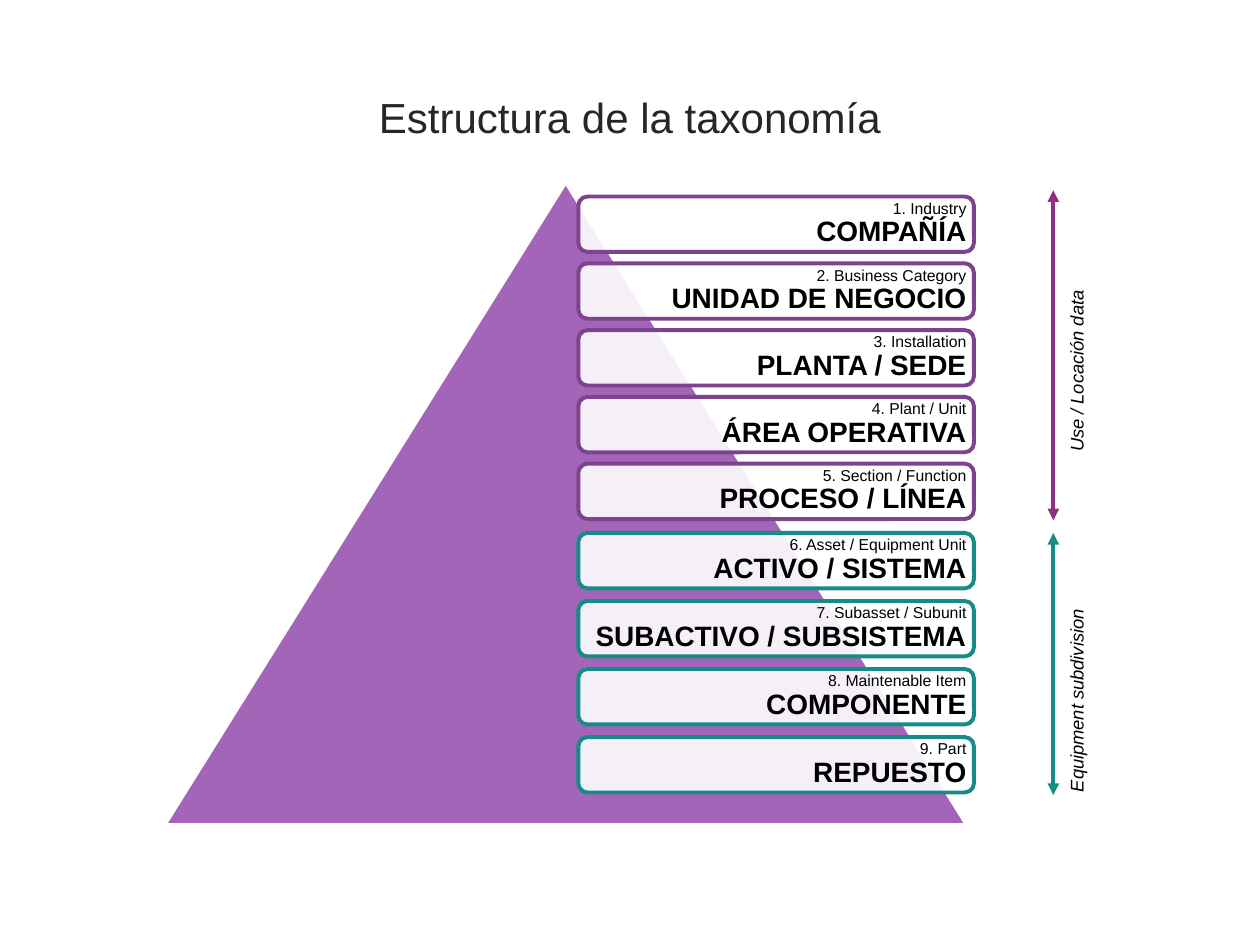
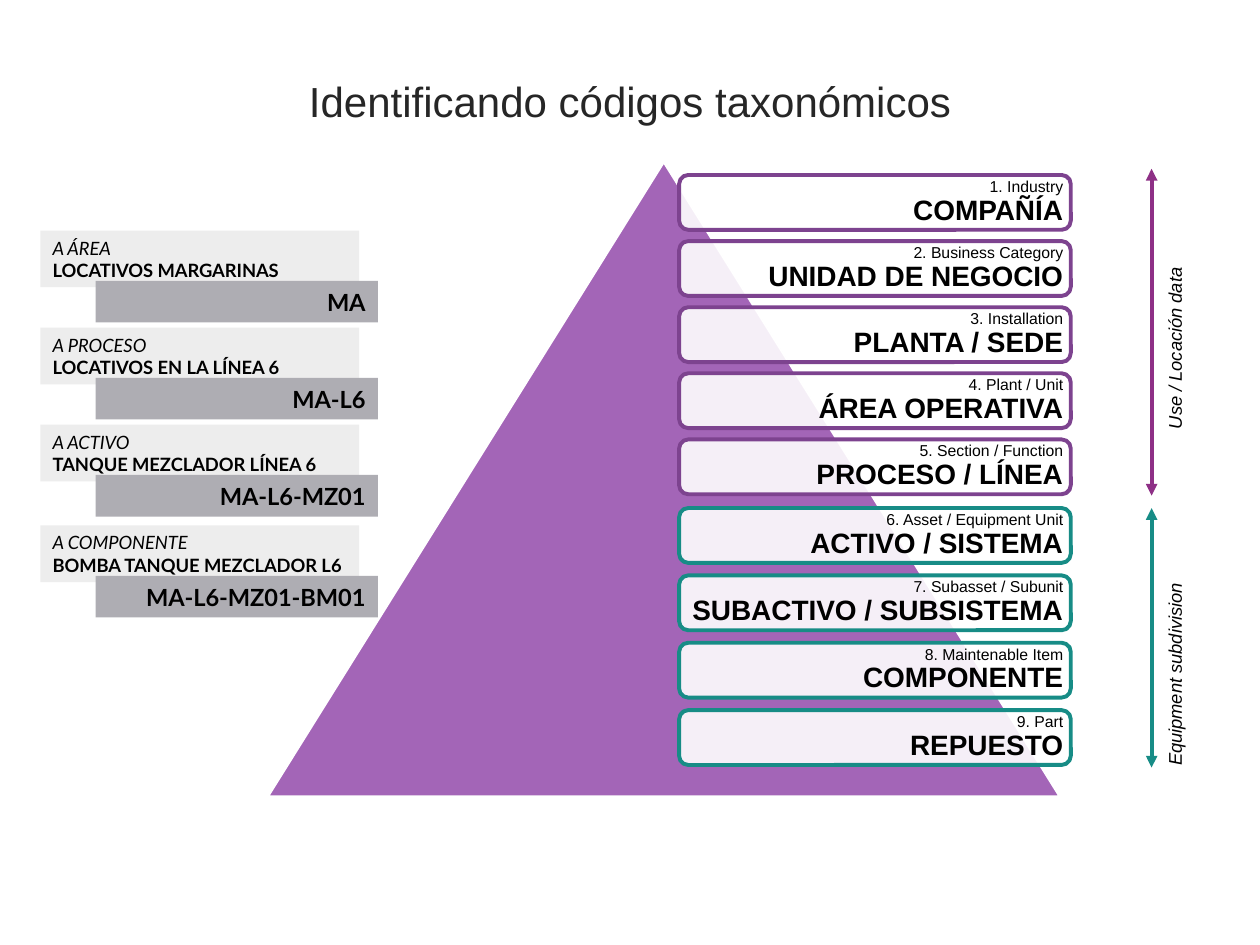
from copy import deepcopy

from lxml import etree
from pptx import Presentation
from pptx.dml.color import RGBColor
from pptx.enum.shapes import MSO_CONNECTOR, MSO_SHAPE
from pptx.enum.text import MSO_ANCHOR, PP_ALIGN
from pptx.oxml.ns import qn
from pptx.util import Inches, Pt

TRIANGLE, ROUNDED, RECTANGLE = (
    MSO_SHAPE.ISOSCELES_TRIANGLE, MSO_SHAPE.ROUNDED_RECTANGLE, MSO_SHAPE.RECTANGLE)
STRAIGHT = MSO_CONNECTOR.STRAIGHT
LEFT, CENTER, RIGHT = PP_ALIGN.LEFT, PP_ALIGN.CENTER, PP_ALIGN.RIGHT
TOP, MIDDLE = MSO_ANCHOR.TOP, MSO_ANCHOR.MIDDLE

WHITE, BLACK, TITLE_GREY = "FFFFFF", "000000", "262626"
LILAC, PURPLE, MAGENTA, TEAL = "A365B7", "7D438F", "8E3086", "178C86"
LABEL_GREY, CODE_GREY = "EDEDED", "AEADB3"
BODY_FONT, CODE_FONT = "Arial", "Lato"

# Vertical lengths are measured from the tip of the pyramid.
LEVEL_GROUPS = [
    {"name": "Use / Locación data", "border": PURPLE, "axis": MAGENTA,
     "span": (0.05, 2.67), "name_middle": 1.14, "name_width": 2.17,
     "first": 0.1, "pitch": 0.53,
     "levels": [("1. Industry", "COMPAÑÍA"),
                ("2. Business Category", "UNIDAD DE NEGOCIO"),
                ("3. Installation", "PLANTA / SEDE"),
                ("4. Plant / Unit", "ÁREA OPERATIVA"),
                ("5. Section / Function", "PROCESO / LÍNEA")]},
    {"name": "Equipment subdivision", "border": TEAL, "axis": TEAL,
     "span": (2.77, 4.85), "name_middle": 3.8, "name_width": 2.25,
     "first": 2.77, "pitch": 0.54,
     "levels": [("6. Asset / Equipment Unit", "ACTIVO / SISTEMA"),
                ("7. Subasset / Subunit", "SUBACTIVO / SUBSISTEMA"),
                ("8. Maintenable Item", "COMPONENTE"),
                ("9. Part", "REPUESTO")]},
]

CODES = [
    (1.83, "A ÁREA", "LOCATIVOS MARGARINAS", "MA"),
    (2.6, "A PROCESO", "LOCATIVOS EN LA LÍNEA 6", "MA-L6"),
    (3.37, "A ACTIVO", "TANQUE MEZCLADOR LÍNEA 6", "MA-L6-MZ01"),
    (4.17, "A COMPONENTE", "BOMBA TANQUE MEZCLADOR L6", "MA-L6-MZ01-BM01"),
]


def color(hex_code):
    return RGBColor.from_string(hex_code)


class Deck:
    """Holds the presentation, its style and the current slide."""

    def __init__(self):
        self.presentation = Presentation()
        self.presentation.slide_width = Inches(10)
        self.presentation.slide_height = Inches(7.5)
        self.slide = None

    def new_slide(self, title, title_top):
        self.slide = self.presentation.slides.add_slide(
            self.presentation.slide_layouts[6])
        frame = self.text_box(0, title_top, 10, 0.53).text_frame
        frame.margin_top = Inches(0.09)
        frame.text = title
        self.style(frame.paragraphs[0], 24, align=CENTER, ink=TITLE_GREY)

    def style(self, paragraph, size, font=BODY_FONT, align=LEFT, ink=BLACK,
              bold=False, italic=False):
        paragraph.alignment = align
        for run in paragraph.runs:
            run.font.name = font
            run.font.size = Pt(size)
            run.font.bold = bold
            run.font.italic = italic
            run.font.color.rgb = color(ink)

    def text_box(self, left, top, width, height):
        box = self.slide.shapes.add_textbox(
            Inches(left), Inches(top), Inches(width), Inches(height))
        box.text_frame.word_wrap = True
        return box

    def shape(self, kind, left, top, width, height, fill, border=None,
              border_width=1, opacity=100):
        shape = self.slide.shapes.add_shape(
            kind, Inches(left), Inches(top), Inches(width), Inches(height))
        shape.shadow.inherit = False
        shape.fill.solid()
        shape.fill.fore_color.rgb = color(fill)
        if opacity < 100:
            rgb = shape.fill._xPr.find(qn("a:solidFill"))[0]
            etree.SubElement(rgb, qn("a:alpha"), val=str(opacity * 1000))
        if border:
            shape.line.color.rgb = color(border)
            shape.line.width = Pt(border_width)
        else:
            shape.line.fill.background()
        return shape

    def double_arrow(self, x, top, bottom, ink):
        arrow = self.slide.shapes.add_connector(
            STRAIGHT, Inches(x), Inches(top), Inches(x), Inches(bottom))
        arrow.line.color.rgb = color(ink)
        arrow.line.width = Pt(2.25)
        for end in ("a:headEnd", "a:tailEnd"):
            etree.SubElement(arrow.line._ln, qn(end), type="triangle")
        etree.SubElement(arrow._element.spPr, qn("a:effectLst"))

    def vertical_label(self, text, center_x, center_y, width):
        height = 0.35
        label = self.text_box(center_x - width / 2, center_y - height / 2,
                              width, height)
        label.rotation = 270
        label.text_frame.text = text
        self.style(label.text_frame.paragraphs[0], 10.5, italic=True)

    def level(self, left, top, scale, standard_name, local_name, border):
        """Draw one level: a translucent frame and its two names."""
        width, height = 3.14 * scale, 0.44 * scale
        self.shape(ROUNDED, left, top, width, height, WHITE, border, 2.25, 90)
        frame = self.text_box(left + 0.02, top + 0.02,
                              width - 0.04, height - 0.04).text_frame
        frame.vertical_anchor = MIDDLE
        frame.margin_left = frame.margin_right = Inches(0.04)
        frame.margin_top = frame.margin_bottom = Inches(0.04)
        paragraph = frame.paragraphs[0]
        paragraph.text = f"{standard_name}\v{local_name}"
        paragraph.line_spacing = 0.9
        self.style(paragraph, 9, align=RIGHT)
        small, large = paragraph.runs
        # The line break takes the small size, so it does not widen its line.
        paragraph._p.find(qn("a:br")).append(deepcopy(small._r.rPr))
        large.font.size = Pt(16)
        large.font.bold = True

    def pyramid(self, left, top, levels_left, axis_x, scale=1.0):
        for group in LEVEL_GROUPS:
            start, end = (top + y * scale for y in group["span"])
            self.double_arrow(axis_x, start, end, group["axis"])
            self.vertical_label(group["name"], axis_x + 0.22,
                                top + group["name_middle"] * scale,
                                group["name_width"])
        self.shape(TRIANGLE, left, top, 6.34 * scale, 5.08 * scale, LILAC, WHITE)
        for group in LEVEL_GROUPS:
            for row, names in enumerate(group["levels"]):
                offset = group["first"] + row * group["pitch"]
                self.level(levels_left, top + offset * scale, scale, *names,
                           group["border"])

    def code_card(self, top, level, item, code):
        label = self.shape(RECTANGLE, 0.32, top, 2.53, 0.45, LABEL_GREY)
        label.text_frame.vertical_anchor = TOP
        label.text_frame.text = f"{level}\n{item}"
        level_line, item_line = label.text_frame.paragraphs
        self.style(level_line, 10.5, CODE_FONT, italic=True)
        self.style(item_line, 10.5, CODE_FONT, bold=True)
        tag = self.shape(RECTANGLE, 0.76, top + 0.4, 2.24, 0.33, CODE_GREY)
        tag.text_frame.text = code
        self.style(tag.text_frame.paragraphs[0], 13.5, CODE_FONT, RIGHT, bold=True)


def main():
    deck = Deck()
    deck.new_slide("Estructura de la taxonomía", 0.64)
    deck.pyramid(left=1.32, top=1.46, levels_left=4.59, axis_x=8.36)

    deck.new_slide("Identificando códigos taxonómicos", 0.51)
    deck.pyramid(left=2.13, top=1.29, levels_left=5.39, axis_x=9.14, scale=0.99)
    for card in CODES:
        deck.code_card(*card)

    deck.presentation.save("out.pptx")


if __name__ == "__main__":
    main()
